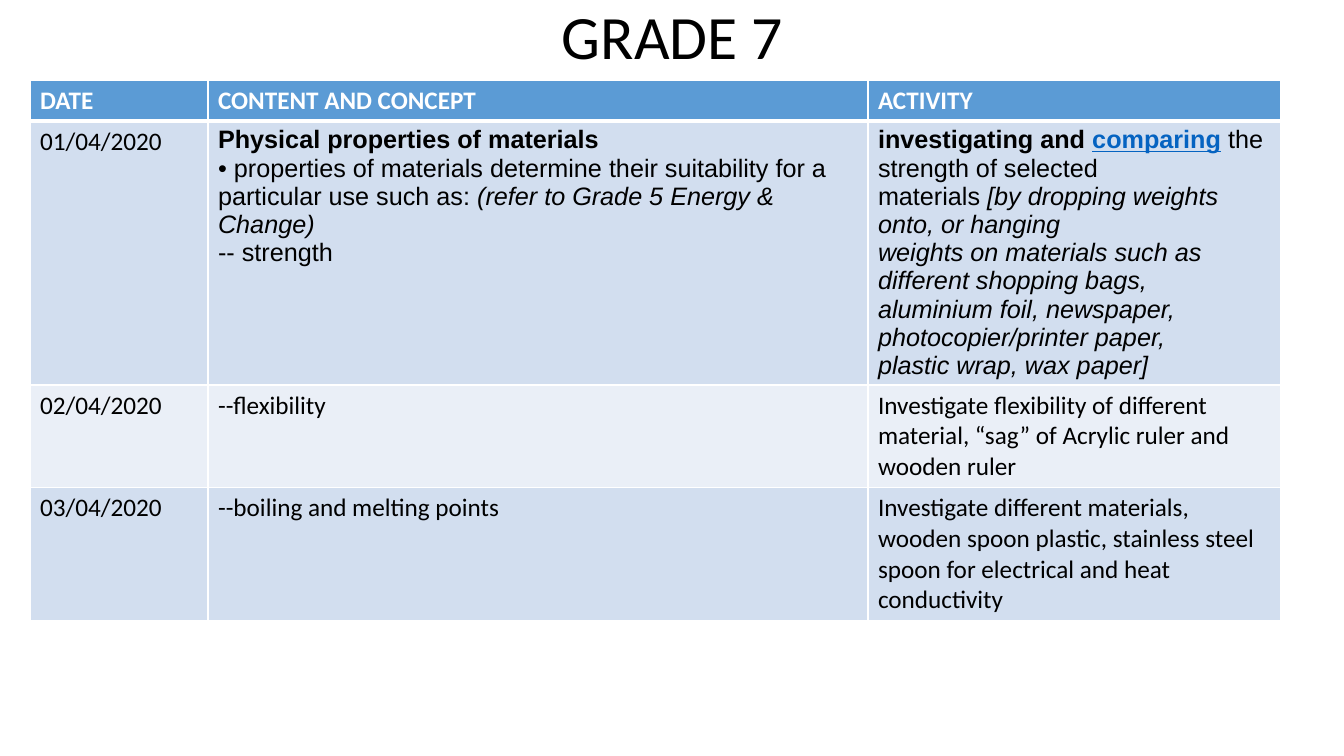
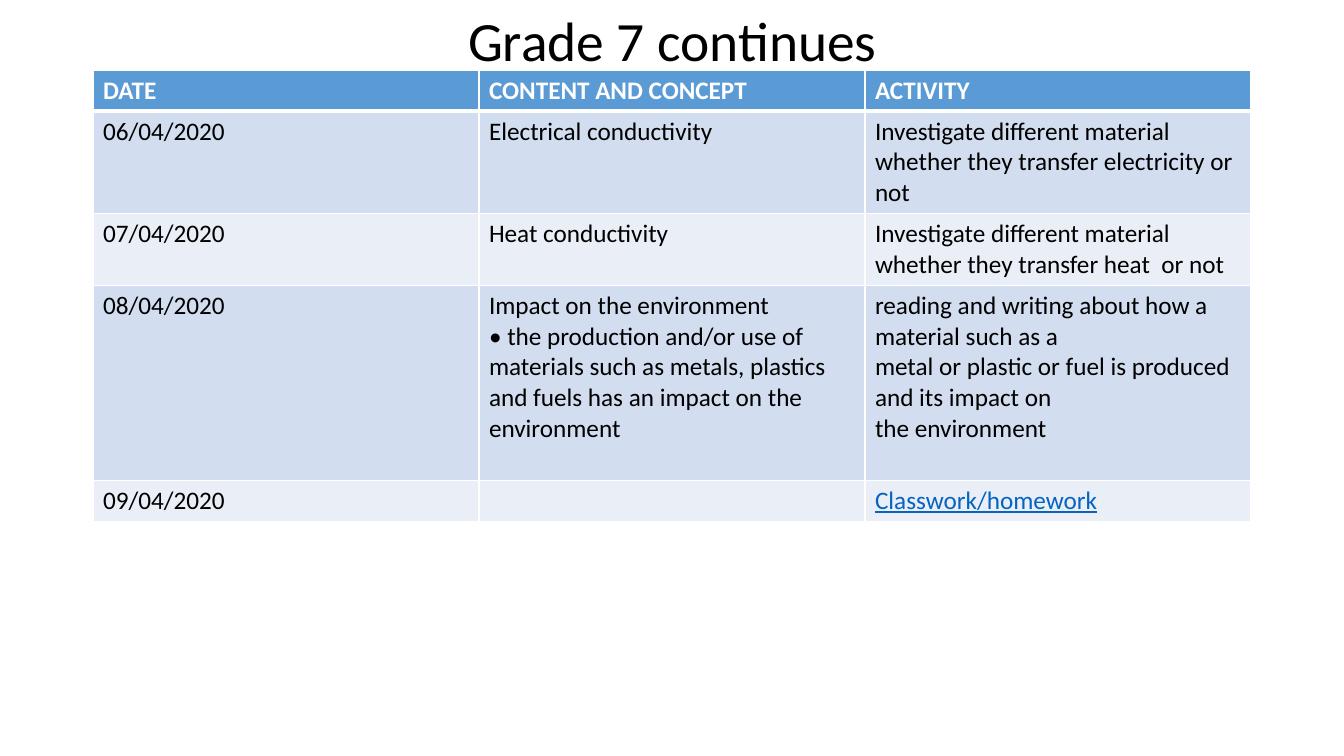
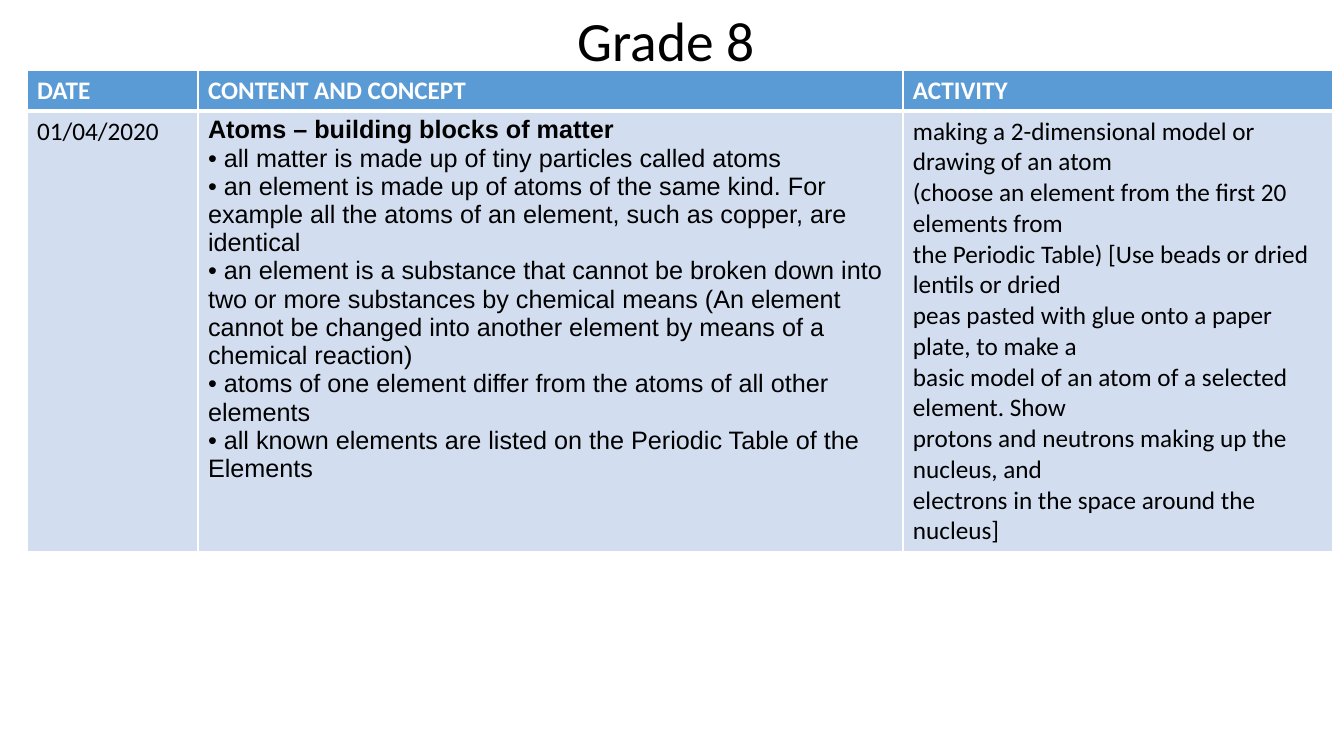
import dataclasses

import lxml.etree
import pptx
import pptx.dml.color
import pptx.enum.text
import pptx.oxml.ns
import pptx.presentation
import pptx.slide
import pptx.table
import pptx.text.text
import pptx.util

PX_PER_INCH = 100.8
BLACK, WHITE, LINK = "000000", "FFFFFF", "0563C1"
HEADER_FILL = "5B9BD5"
BAND_FILLS = ("D2DEEF", "EAEFF7")
THIN, THICK = 1, 3
HEADINGS = ("DATE", "CONTENT AND CONCEPT", "ACTIVITY")
TITLE_LEFT, TITLE_WIDTH = 93, 1159


@dataclasses.dataclass(frozen=True)
class Run:
    text: str
    bold: bool = False
    italic: bool = False
    link: bool = False


Paragraph = str | tuple[Run, ...]


@dataclasses.dataclass(frozen=True)
class CellText:
    paragraphs: tuple[Paragraph, ...]
    font: str = "Calibri"


@dataclasses.dataclass(frozen=True)
class Lesson:
    date: str
    content: CellText
    activity: CellText
    height: int


@dataclasses.dataclass(frozen=True)
class Plan:
    title: str
    title_size: float
    title_top: int
    title_height: int
    left: int
    column_widths: tuple[int, int, int]
    lessons: tuple[Lesson, ...]
    header_height: int = 41


def cell_text(*paragraphs: Paragraph, font: str = "Calibri") -> CellText:
    return CellText(paragraphs, font)


PLANS = (
    Plan(
        "GRADE 7", 44, 0, 80, 30, (178, 660, 413),
        (
            Lesson(
                "01/04/2020",
                cell_text(
                    (Run("Physical properties of materials", bold=True),),
                    "• properties of materials determine their suitability for a",
                    (
                        Run("particular use such as: "),
                        Run("(refer to Grade 5 Energy & Change)", italic=True),
                    ),
                    "-- strength",
                    font="Arial",
                ),
                cell_text(
                    (
                        Run("investigating and ", bold=True),
                        Run("comparing", bold=True, link=True),
                        Run(" ", bold=True),
                        Run("the strength of selected"),
                    ),
                    (
                        Run("materials "),
                        Run("[by dropping weights onto, or hanging", italic=True),
                    ),
                    (Run("weights on materials such as different shopping bags,", italic=True),),
                    (Run("aluminium foil, newspaper, photocopier/printer paper,", italic=True),),
                    (Run("plastic wrap, wax paper]", italic=True),),
                    font="Arial",
                ),
                264,
            ),
            Lesson(
                "02/04/2020",
                cell_text("--flexibility"),
                cell_text(
                    "Investigate flexibility of different material, “sag” of Acrylic ruler "
                    "and wooden ruler"
                ),
                102,
            ),
            Lesson(
                "03/04/2020",
                cell_text("--boiling and melting points"),
                cell_text(
                    "Investigate different materials, wooden spoon plastic, stainless steel "
                    "spoon for electrical and heat conductivity"
                ),
                133,
            ),
        ),
    ),
    Plan(
        "Grade 7 continues", 39.6, 17, 53, 93, (386, 386, 386),
        (
            Lesson(
                "06/04/2020",
                cell_text("Electrical conductivity"),
                cell_text("Investigate different material whether they transfer electricity or not"),
                102,
            ),
            Lesson(
                "07/04/2020",
                cell_text("Heat conductivity"),
                cell_text("Investigate different material whether they transfer heat  or not"),
                72,
            ),
            Lesson(
                "08/04/2020",
                cell_text(
                    "Impact on the environment",
                    "• the production and/or use of materials such as metals, plastics",
                    "and fuels has an impact on the environment",
                ),
                cell_text(
                    "reading and writing about how a material such as a",
                    "metal or plastic or fuel is produced and its impact on",
                    "the environment",
                ),
                195,
            ),
            Lesson(
                "09/04/2020",
                cell_text(),
                cell_text((Run("Classwork/homework", link=True),)),
                40,
            ),
        ),
    ),
    Plan(
        "Grade 8 ", 39.6, 17, 53, 27, (171, 705, 430),
        (
            Lesson(
                "01/04/2020",
                cell_text(
                    (Run("Atoms – building blocks of matter", bold=True),),
                    "• all matter is made up of tiny particles called atoms",
                    "• an element is made up of atoms of the same kind. For",
                    "example all the atoms of an element, such as copper, are",
                    "identical",
                    "• an element is a substance that cannot be broken down into",
                    "two or more substances by chemical means (An element",
                    "cannot be changed into another element by means of a",
                    "chemical reaction)",
                    "• atoms of one element differ from the atoms of all other",
                    "elements",
                    "• all known elements are listed on the Periodic Table of the",
                    "Elements",
                    font="Arial",
                ),
                cell_text(
                    "making a 2-dimensional model or drawing of an atom",
                    "(choose an element from the first 20 elements from",
                    "the Periodic Table) [Use beads or dried lentils or dried",
                    "peas pasted with glue onto a paper plate, to make a",
                    "basic model of an atom of a selected element. Show",
                    "protons and neutrons making up the nucleus, and",
                    "electrons in the space around the nucleus]",
                ),
                441,
            ),
        ),
    ),
)


def px(length: int) -> pptx.util.Emu:
    return pptx.util.Emu(round(length * 914400 / PX_PER_INCH))


def color(value: str) -> pptx.dml.color.RGBColor:
    return pptx.dml.color.RGBColor.from_string(value)


def write_text(
    frame: pptx.text.text.TextFrame,
    paragraphs: tuple[Paragraph, ...],
    *,
    size: float = 18,
    font: str = "Calibri",
    fill: str = BLACK,
    bold: bool = False,
    align: pptx.enum.text.PP_ALIGN = pptx.enum.text.PP_ALIGN.LEFT,
    line_spacing: float = 1.0,
) -> None:
    for index, content in enumerate(paragraphs):
        paragraph = frame.add_paragraph() if index else frame.paragraphs[0]
        paragraph.alignment = align
        paragraph.line_spacing = line_spacing
        pieces = (Run(content, bold=bold),) if isinstance(content, str) else content
        for piece in pieces:
            run = paragraph.add_run()
            run.text = piece.text
            run.font.name = font
            run.font.size = pptx.util.Pt(size)
            run.font.bold = piece.bold
            run.font.italic = piece.italic
            run.font.underline = piece.link
            run.font.color.rgb = color(LINK if piece.link else fill)


def style_cell(cell: pptx.table._Cell, fill: str, top: int, bottom: int) -> None:
    """Give the cell its fill and white borders, widths in points."""
    properties = cell._tc.get_or_add_tcPr()
    qualify = pptx.oxml.ns.qn
    for side, width in (("L", THIN), ("R", THIN), ("T", top), ("B", bottom)):
        line = lxml.etree.SubElement(
            properties, qualify(f"a:ln{side}"), w=str(pptx.util.Pt(width))
        )
        solid = lxml.etree.SubElement(line, qualify("a:solidFill"))
        lxml.etree.SubElement(solid, qualify("a:srgbClr"), val=WHITE)
    cell.fill.solid()
    cell.fill.fore_color.rgb = color(fill)


def add_title(slide: pptx.slide.Slide, plan: Plan) -> None:
    title = slide.shapes.title
    title.left, title.top = px(TITLE_LEFT), px(plan.title_top)
    title.width, title.height = px(TITLE_WIDTH), px(plan.title_height)
    frame = title.text_frame
    frame.word_wrap = True
    frame.auto_size = pptx.enum.text.MSO_AUTO_SIZE.NONE
    frame.vertical_anchor = pptx.enum.text.MSO_ANCHOR.MIDDLE
    write_text(
        frame, (plan.title,), size=plan.title_size,
        align=pptx.enum.text.PP_ALIGN.CENTER, line_spacing=0.9,
    )


def add_lesson_table(slide: pptx.slide.Slide, plan: Plan) -> None:
    heights = (plan.header_height, *(lesson.height for lesson in plan.lessons))
    table = slide.shapes.add_table(
        len(heights), len(HEADINGS),
        px(plan.left), px(plan.title_top + plan.title_height),
        px(sum(plan.column_widths)), px(sum(heights)),
    ).table
    table.first_row = table.horz_banding = False
    for column, width in zip(table.columns, plan.column_widths):
        column.width = px(width)
    for row, height in zip(table.rows, heights):
        row.height = px(height)

    for cell, heading in zip(table.rows[0].cells, HEADINGS):
        style_cell(cell, HEADER_FILL, THIN, THICK)
        write_text(cell.text_frame, (heading,), fill=WHITE, bold=True)
    for index, lesson in enumerate(plan.lessons):
        contents = (cell_text(lesson.date), lesson.content, lesson.activity)
        for cell, content in zip(table.rows[index + 1].cells, contents):
            band = BAND_FILLS[index % len(BAND_FILLS)]
            style_cell(cell, band, THIN if index else THICK, THIN)
            write_text(cell.text_frame, content.paragraphs, font=content.font)


def add_plan_slide(presentation: pptx.presentation.Presentation, plan: Plan) -> None:
    slide = presentation.slides.add_slide(presentation.slide_layouts.get_by_name("Title Only"))
    add_title(slide, plan)
    add_lesson_table(slide, plan)


def main() -> None:
    presentation = pptx.Presentation()
    presentation.slide_width, presentation.slide_height = px(1344), px(756)
    for plan in PLANS:
        add_plan_slide(presentation, plan)
    presentation.save("out.pptx")


if __name__ == "__main__":
    main()
